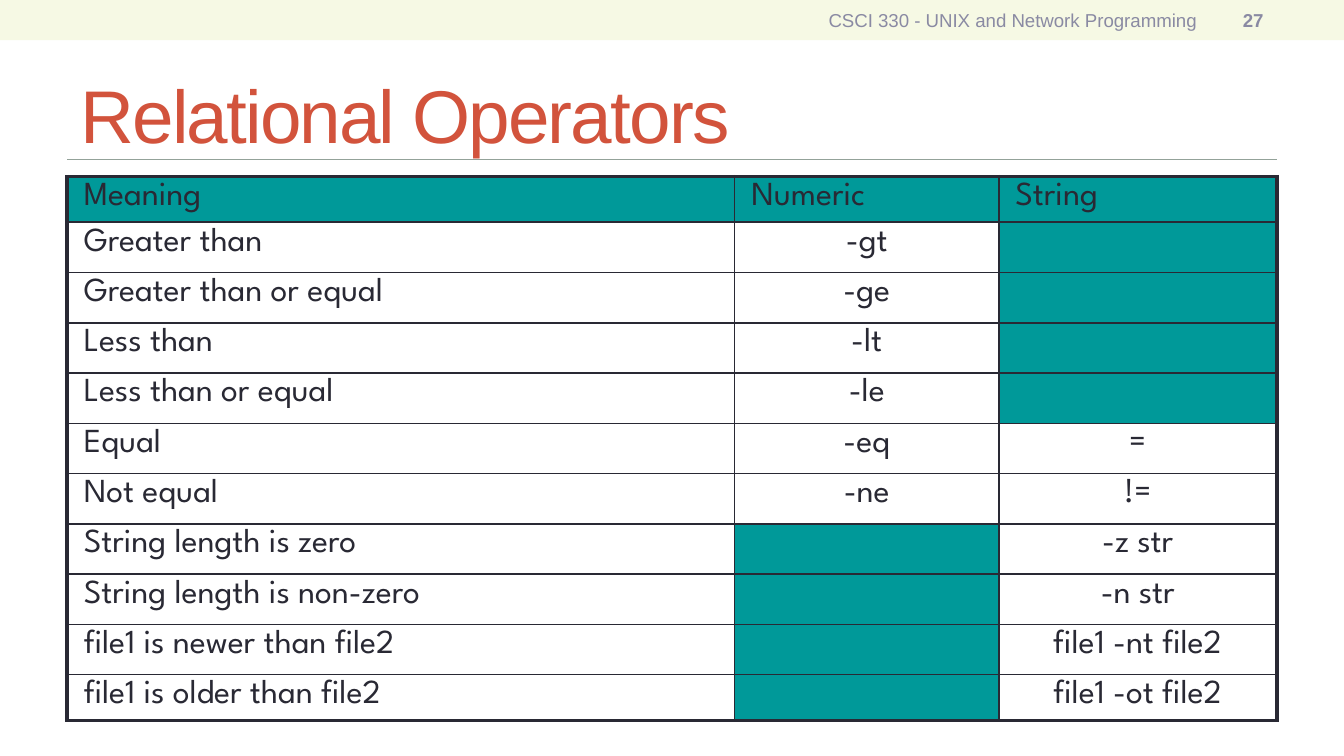
from typing import NamedTuple

from lxml import etree
from pptx import Presentation
from pptx import util as u
from pptx.dml.color import RGBColor
from pptx.enum import shapes, text
from pptx.oxml import ns

Pt = u.Pt

INK = RGBColor(0x29, 0x29, 0x34)
TEAL = RGBColor(0x00, 0x99, 0x99)
RUST = RGBColor(0xD2, 0x53, 0x3C)
CREAM = RGBColor(0xF6, 0xF9, 0xE4)
SAGE = RGBColor(0x93, 0xA2, 0x99)
LAVENDER = RGBColor(0x8A, 0x8A, 0xA3)

THIN, THICK = 1, 2.25
COLUMN_WIDTHS = (357.6, 141.5, 148.9)
HEADER_HEIGHT, BODY_HEIGHT, LAST_HEIGHT = 21.6, 26.95, 22


class Label(NamedTuple):
    wording: str
    left: float
    top: float
    width: float
    height: float
    size: float
    color: RGBColor
    align: text.PP_ALIGN
    bold: bool = False
    spacing: float = 0


class Operator(NamedTuple):
    meaning: str
    numeric: str = ""
    string: str = ""


HEADER = Operator("Meaning", "Numeric", "String")
OPERATORS = (
    Operator("Greater than", "-gt"),
    Operator("Greater than or equal", "-ge"),
    Operator("Less than", "-lt"),
    Operator("Less than or equal", "-le"),
    Operator("Equal", "-eq", "="),
    Operator("Not equal", "-ne", "!="),
    Operator("String length is zero", string="-z str"),
    Operator("String length is non-zero", string="-n str"),
    Operator("file1 is newer than file2", string="file1 -nt file2"),
    Operator("file1 is older than file2", string="file1 -ot file2"),
)
LABELS = (
    Label("Relational Operators", 36, 31.7, 648, 58.3, 40, RUST,
          text.PP_ALIGN.LEFT, spacing=-1),
    Label("27", 648, 1.1, 36, 19.4, 10, LAVENDER, text.PP_ALIGN.RIGHT, bold=True),
    Label("CSCI 330 - UNIX and Network Programming", 270, 1.1, 378, 19.4, 10,
          LAVENDER, text.PP_ALIGN.RIGHT),
)


def add_label(slide, label: Label) -> None:
    box = slide.shapes.add_textbox(Pt(label.left), Pt(label.top),
                                   Pt(label.width), Pt(label.height))
    frame = box.text_frame
    frame.word_wrap = True
    frame.vertical_anchor = text.MSO_ANCHOR.MIDDLE
    frame.text = label.wording
    paragraph = frame.paragraphs[0]
    paragraph.alignment = label.align
    run = paragraph.runs[0]
    run.font.name, run.font.size, run.font.bold = "Arial", Pt(label.size), label.bold
    run.font.color.rgb = label.color
    if label.spacing:
        run.font._element.set("spc", str(int(label.spacing * 100)))


def set_borders(cell, widths: dict[str, float]) -> None:
    """Border lines come before the fill, in the order L, R, T, B."""
    properties = cell._tc.get_or_add_tcPr()
    for index, (side, width) in enumerate(widths.items()):
        line = etree.Element(ns.qn(f"a:ln{side}"), w=str(Pt(width)))
        fill = etree.SubElement(line, ns.qn("a:solidFill"))
        etree.SubElement(fill, ns.qn("a:srgbClr"), val=str(INK))
        properties.insert(index, line)


def fill_cell(cell, wording: str, centred: bool, shaded: bool) -> None:
    cell.margin_left = cell.margin_right = Pt(8.9)
    cell.margin_top, cell.margin_bottom = Pt(2.88), 0
    if shaded:
        cell.fill.solid()
        cell.fill.fore_color.rgb = TEAL
    else:
        cell.fill.background()
    paragraph = cell.text_frame.paragraphs[0]
    if not wording:
        # A small end mark keeps an empty cell from stretching its row
        etree.SubElement(paragraph._p, ns.qn("a:endParaRPr"), sz="1000")
        return
    paragraph.text = wording
    paragraph.alignment = text.PP_ALIGN.CENTER if centred else text.PP_ALIGN.LEFT
    font = paragraph.runs[0].font
    font.name, font.size = "League Spartan", Pt(18)
    font.color.rgb = INK


def add_operator_table(slide) -> None:
    rows = (HEADER, *OPERATORS)
    heights = (HEADER_HEIGHT, *[BODY_HEIGHT] * (len(rows) - 2), LAST_HEIGHT)
    last_row, last_column = len(rows) - 1, len(COLUMN_WIDTHS) - 1
    table = slide.shapes.add_table(len(rows), len(COLUMN_WIDTHS), Pt(36), Pt(94.6),
                                   Pt(sum(COLUMN_WIDTHS)), Pt(sum(heights))).table
    table.first_row = table.horz_banding = False
    for column, width in zip(table.columns, COLUMN_WIDTHS):
        column.width = Pt(width)
    for r, (operator, height) in enumerate(zip(rows, heights)):
        table.rows[r].height = Pt(height)
        for c, wording in enumerate(operator):
            cell = table.cell(r, c)
            fill_cell(cell, wording, centred=r > 0 and c > 0,
                      shaded=r == 0 or not wording)
            set_borders(cell, {
                "L": THICK if c == 0 else THIN,
                "R": THICK if c == last_column else THIN,
                "T": THICK if r == 0 else THIN,
                "B": THICK if r == last_row else THIN,
            })


def main() -> None:
    deck = Presentation()
    deck.slide_width, deck.slide_height = Pt(720), Pt(405)
    slide = deck.slides.add_slide(deck.slide_layouts[6])

    # Top band
    band = slide.shapes.add_shape(shapes.MSO_SHAPE.RECTANGLE, 0, 0, Pt(720), Pt(21.6))
    band.shadow.inherit = False
    band.fill.solid()
    band.fill.fore_color.rgb = CREAM
    band.line.fill.background()

    # Rule under the title
    rule = slide.shapes.add_connector(shapes.MSO_CONNECTOR.STRAIGHT,
                                      Pt(36), Pt(85.5), Pt(684), Pt(85.5))
    rule.line.color.rgb = SAGE
    rule.line.width = Pt(0.75)
    etree.SubElement(rule._element.spPr, ns.qn("a:effectLst"))

    # Title, page number and course name
    for label in LABELS:
        add_label(slide, label)

    # Operators by meaning
    add_operator_table(slide)
    deck.save("out.pptx")


if __name__ == "__main__":
    main()
